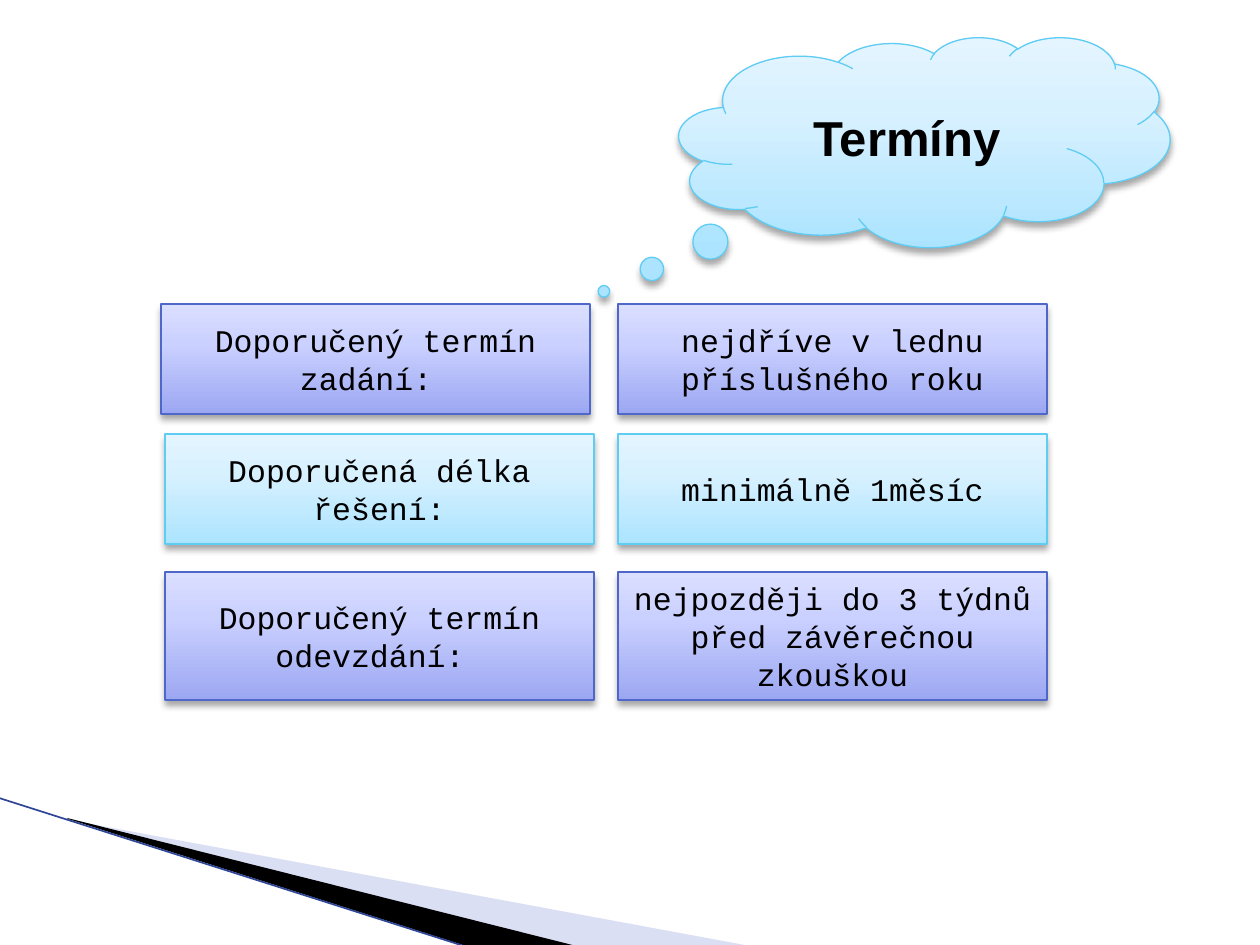
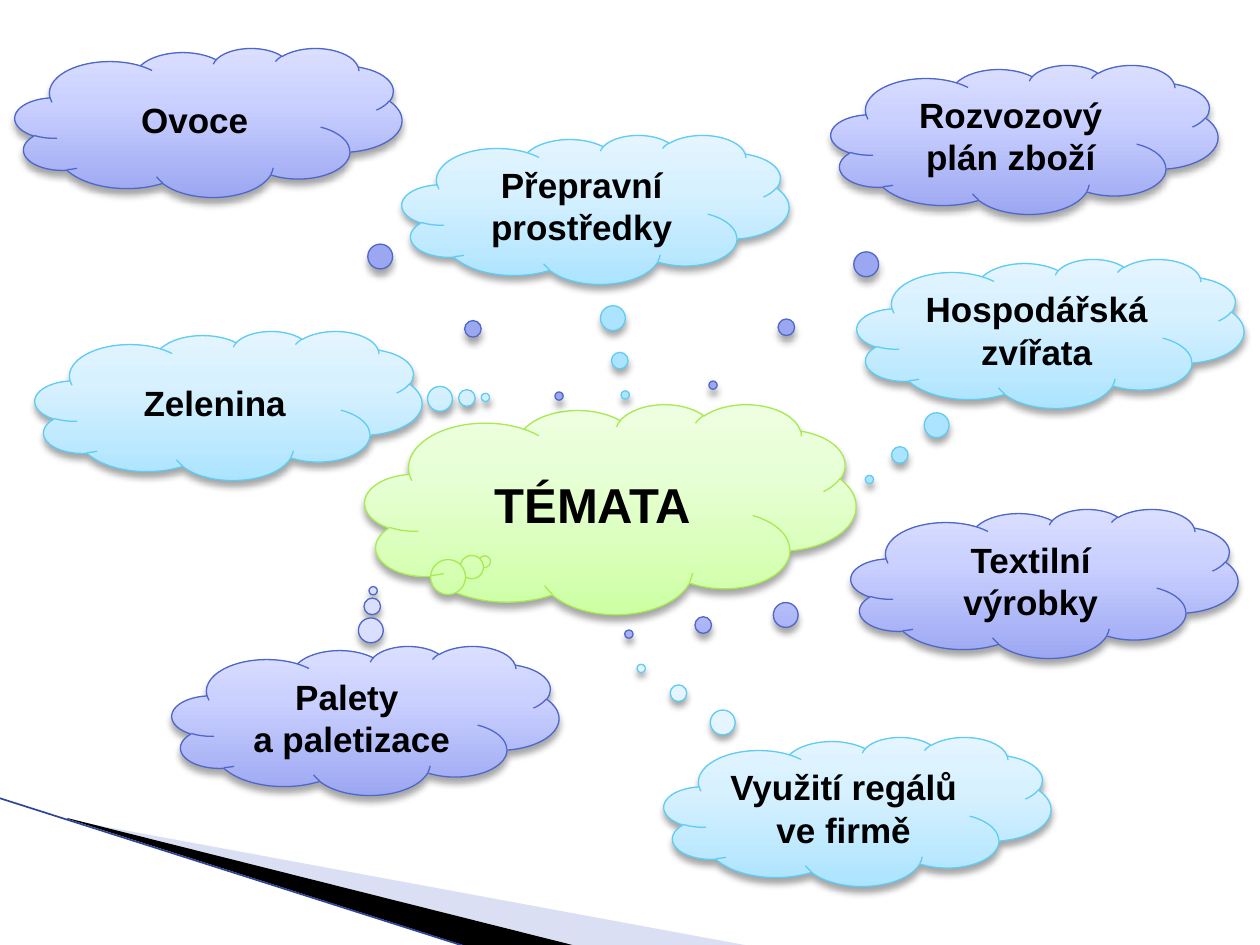
from lxml.etree import SubElement
from pptx import Presentation
from pptx.dml.color import RGBColor
from pptx.enum.shapes import MSO_CONNECTOR as Connector, MSO_SHAPE as Preset
from pptx.enum.text import MSO_ANCHOR as Anchor, PP_ALIGN as Align
from pptx.oxml.ns import qn
from pptx.util import Emu, Pt

PX = 914400 / 126
BLACK = RGBColor(0x00, 0x00, 0x00)
LILAC = RGBColor(0xDB, 0xDF, 0xF3)
NAVY = RGBColor(0x2F, 0x45, 0x96)
INDIGO = [RGBColor(0x4E, 0x67, 0xC8), RGBColor(0x9C, 0xA7, 0xF2),
          RGBColor(0xCB, 0xD1, 0xFF), RGBColor(0xDA, 0xDF, 0xFF)]
SKY = [RGBColor(0x5E, 0xCC, 0xF3), RGBColor(0xAC, 0xE4, 0xFF),
       RGBColor(0xD8, 0xF1, 0xFF), RGBColor(0xE4, 0xF5, 0xFF)]
LIME = [RGBColor(0xA7, 0xEA, 0x52), RGBColor(0xCD, 0xFF, 0xA3),
        RGBColor(0xE7, 0xFF, 0xD4), RGBColor(0xEE, 0xFF, 0xE1)]
STOPS = [0, 65, 100]
BIG_CLOUD = (491, 210)
SMALL_CLOUD = (387, 149)


def px(*lengths):
    return [Emu(round(length * PX)) for length in lengths]


def add_glossy(slide, preset, bounds, palette, text, font, size, bold=False):
    shape = slide.shapes.add_shape(preset, *px(*bounds))
    outline, *colours = palette
    shape.line.color.rgb = outline
    shape.line.width = Pt(0.75)

    shape.fill.gradient()
    shape.fill.gradient_angle = 90
    stop_list = shape.element.spPr.find(f".//{qn('a:gsLst')}")
    stop_list.clear()
    for stop, colour in zip(STOPS, colours):
        node = SubElement(stop_list, qn("a:gs"), pos=str(stop * 1000))
        SubElement(node, qn("a:srgbClr"), val=str(colour))

    shape.shadow.inherit = False
    effects = shape.element.spPr.find(qn("a:effectLst"))
    shadow = SubElement(effects, qn("a:outerShdw"), blurRad=str(Pt(4)),
                        dist=str(Pt(3)), dir="5400000", rotWithShape="0")
    shade = SubElement(shadow, qn("a:srgbClr"), val=str(BLACK))
    SubElement(shade, qn("a:alpha"), val="35000")

    frame = shape.text_frame
    frame.word_wrap = True
    frame.vertical_anchor = Anchor.MIDDLE
    frame.text = text
    for para in frame.paragraphs:
        para.alignment = Align.CENTER
        para.font.name = font
        para.font.size = Pt(size)
        para.font.bold = bold
        para.font.color.rgb = BLACK
    return shape


deck = Presentation()
deck.slide_width, deck.slide_height = px(1260, 945)
layout = deck.slide_layouts[6]
dates_slide = deck.slides.add_slide(layout)
topics_slide = deck.slides.add_slide(layout)

wedges = [
    (LILAC, [(69, 820), (750, 946), (575, 946), (69, 819)]),
    (BLACK, [(67, 818), (576, 946), (469, 947), (68, 819)]),
]
for colour, points in wedges:
    builder = dates_slide.shapes.build_freeform(*points[0], scale=PX)
    builder.add_line_segments(points[1:])
    wedge = builder.convert_to_shape()
    wedge.fill.solid()
    wedge.fill.fore_color.rgb = colour
    wedge.line.fill.background()
    wedge.shadow.inherit = False
    layout.shapes.element.append(wedge.element)

edge = dates_slide.shapes.add_connector(Connector.STRAIGHT, *px(-1, 798, 467, 947))
edge.line.color.rgb = NAVY
edge.line.width = Pt(0.95)
SubElement(edge.element.spPr, qn("a:effectLst"))
layout.shapes.element.append(edge.element)

clouds = [
    (dates_slide, "Termíny", 679, 37, BIG_CLOUD, LIME and SKY, -0.653, 0.711),
    (topics_slide, "TÉMATA", 365, 404, BIG_CLOUD, LIME, -0.256, 0.251),
    (topics_slide, "Přepravní prostředky", 402, 135, SMALL_CLOUD, SKY, 0.077, 1.245),
    (topics_slide, "Rozvozový plán zboží", 831, 65, SMALL_CLOUD, INDIGO, -0.805, 1.649),
    (topics_slide, "Zelenina", 35, 331, SMALL_CLOUD, SKY, 0.664, -0.054),
    (topics_slide, "Palety \na paletizace", 172, 646, SMALL_CLOUD, INDIGO, 0.02, -0.871),
    (topics_slide, "Využití regálů ve firmě", 664, 737, SMALL_CLOUD, SKY, -0.559, -0.96),
    (topics_slide, "Hospodářská zvířata", 857, 259, SMALL_CLOUD, SKY, -0.468, 0.98),
    (topics_slide, "Ovoce", 15, 48, SMALL_CLOUD, INDIGO, 0.906, 1.836),
    (topics_slide, "Textilní výrobky", 851, 509, SMALL_CLOUD, INDIGO, -1.074, 0.34),
]
for slide, text, left, top, extent, palette, tail_x, tail_y in clouds:
    size = 28 if extent == BIG_CLOUD else 20
    cloud = add_glossy(slide, Preset.CLOUD_CALLOUT, (left, top, *extent),
                       palette, text, "Arial", size, bold=True)
    cloud.adjustments[0] = tail_x
    cloud.adjustments[1] = tail_y

date_rows = [
    (161, 304, 110, INDIGO, "Doporučený termín zadání: ", "nejdříve v lednu příslušného roku"),
    (165, 434, 110, SKY, "Doporučená délka řešení:", "minimálně 1měsíc"),
    (165, 572, 128, INDIGO, "Doporučený termín odevzdání: ",
     "nejpozději do 3 týdnů před závěrečnou zkouškou"),
]
for label_left, top, height, palette, label, answer in date_rows:
    for left, text in [(label_left, label), (618, answer)]:
        add_glossy(dates_slide, Preset.RECTANGLE, (left, top, 429, height),
                   palette, text, "Courier New", 18)

deck.save("out.pptx")
